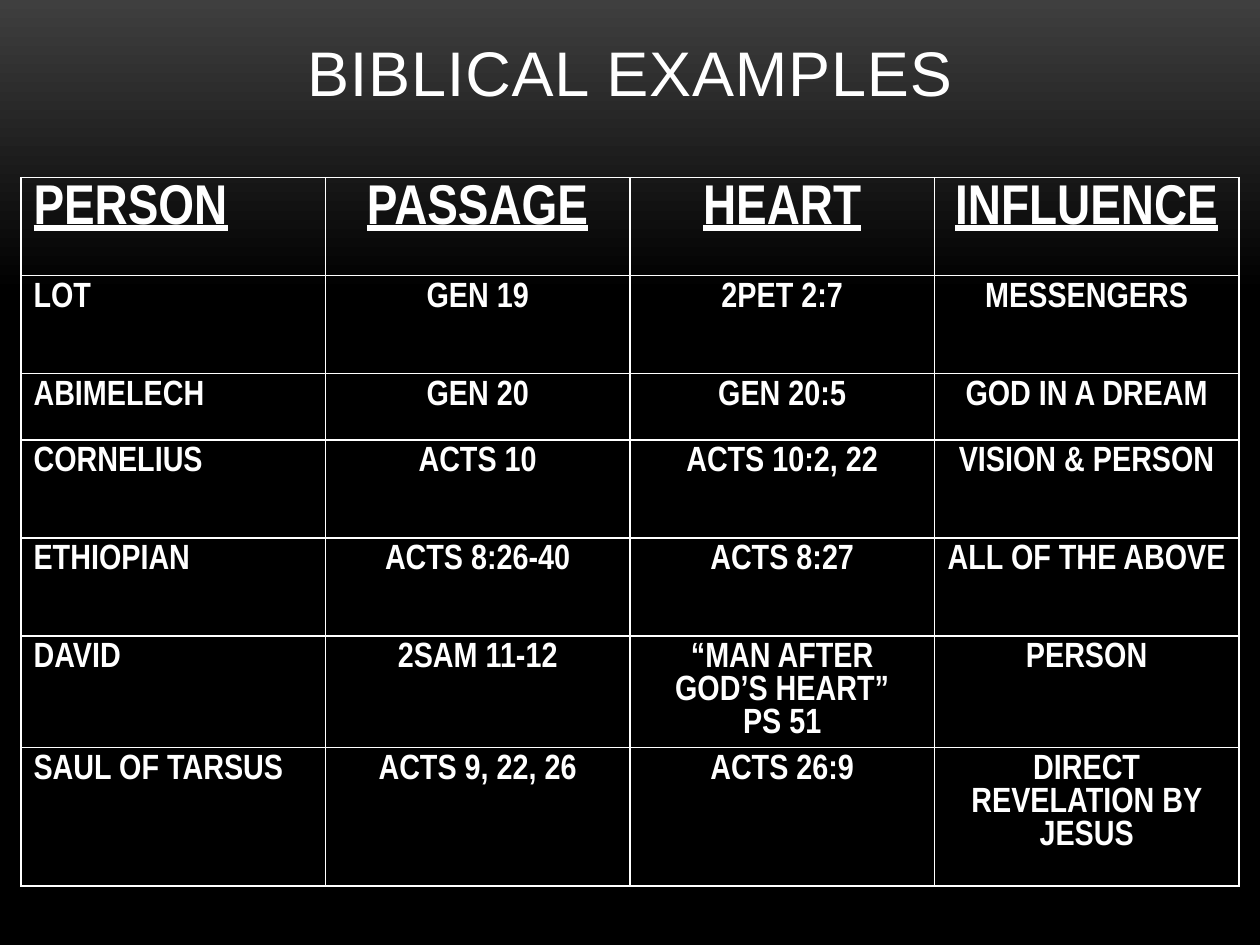
from dataclasses import dataclass

from lxml.etree import SubElement
from pptx import Presentation
from pptx.dml.color import RGBColor
from pptx.enum.text import MSO_ANCHOR as Anchor, PP_ALIGN as Align
from pptx.oxml.ns import qn
from pptx.util import Pt


@dataclass(frozen=True)
class Theme:
    text: str = "FFFFFF"
    glow: str = "3F3F3F"
    base: str = "000000"
    title_font: str = "Arial"
    table_font: str = "Arial Narrow"
    title_size: int = 36
    header_size: int = 32
    body_size: int = 20


THEME = Theme()

COLUMN_WIDTH = 174
ROW_HEIGHTS = [56, 56, 38, 56, 56, 56, 79]
ROWS = [
    ["PERSON", "PASSAGE", "HEART", "INFLUENCE"],
    ["LOT", "GEN 19", "2PET 2:7", "MESSENGERS"],
    ["ABIMELECH", "GEN 20", "GEN 20:5", "GOD IN A DREAM"],
    ["CORNELIUS", "ACTS 10", "ACTS 10:2, 22", "VISION & PERSON"],
    ["ETHIOPIAN", "ACTS 8:26-40", "ACTS 8:27", "ALL OF THE ABOVE"],
    ["DAVID", "2SAM 11-12", "“MAN AFTER GOD’S HEART”\nPS 51", "PERSON"],
    ["SAUL OF TARSUS", "ACTS 9, 22, 26", "ACTS 26:9",
     "DIRECT REVELATION BY JESUS"],
]


def write_text(frame, text, *, font, size, align=Align.CENTER,
               bold=False, underline=False, spacing=None):
    """Fill a text frame, one paragraph per line of text."""
    for index, line in enumerate(text.split("\n")):
        para = frame.paragraphs[0] if index == 0 else frame.add_paragraph()
        para.alignment = align
        span = para.add_run()
        span.text = line
        span.font.name = font
        span.font.size = Pt(size)
        span.font.bold = bold
        span.font.underline = underline
        span.font.color.rgb = RGBColor.from_string(THEME.text)
        if spacing is not None:
            span.font._element.set("spc", str(round(spacing * 100)))


def paint_background(page):
    """Grey at the top, fading to black in the upper third."""
    fill = page.background.fill
    fill.gradient()
    fill.gradient_angle = 270
    stops = [(0, THEME.glow), (0.31, THEME.base)]
    for stop, (position, color) in zip(fill.gradient_stops, stops):
        stop.position = position
        stop.color.rgb = RGBColor.from_string(color)


def add_title(page, text):
    title = page.shapes.title
    title.left, title.top = Pt(48), Pt(0)
    title.width, title.height = Pt(624), Pt(66)
    title.text_frame.vertical_anchor = Anchor.BOTTOM
    write_text(title.text_frame, text, font=THEME.title_font,
               size=THEME.title_size, spacing=0.5)


def outline_cell(cell, width=1):
    properties = cell._tc.get_or_add_tcPr()
    for index, side in enumerate(("a:lnL", "a:lnR", "a:lnT", "a:lnB")):
        line = properties.makeelement(qn(side), {"w": str(Pt(width))})
        properties.insert(index, line)  # borders come before the fill
        solid = SubElement(line, qn("a:solidFill"))
        SubElement(solid, qn("a:srgbClr"), val=THEME.text)


def add_examples_table(page, rows):
    table = page.shapes.add_table(
        len(rows), len(rows[0]), Pt(12), Pt(101.5),
        Pt(COLUMN_WIDTH * len(rows[0])), Pt(sum(ROW_HEIGHTS))).table
    table.horz_banding = False
    table.first_row = False
    for column in table.columns:
        column.width = Pt(COLUMN_WIDTH)
    for row_index, (values, height) in enumerate(zip(rows, ROW_HEIGHTS)):
        table.rows[row_index].height = Pt(height)
        header = row_index == 0
        for column_index, value in enumerate(values):
            cell = table.cell(row_index, column_index)
            cell.fill.background()
            outline_cell(cell)
            write_text(cell.text_frame, value, font=THEME.table_font,
                       size=THEME.header_size if header else THEME.body_size,
                       align=Align.CENTER if column_index else Align.LEFT,
                       bold=True, underline=header)


def main():
    deck = Presentation()
    deck.slide_width, deck.slide_height = Pt(720), Pt(540)
    page = deck.slides.add_slide(deck.slide_layouts[5])  # title only
    paint_background(page)
    add_title(page, "BIBLICAL EXAMPLES")
    add_examples_table(page, ROWS)
    deck.save("out.pptx")


if __name__ == "__main__":
    main()
